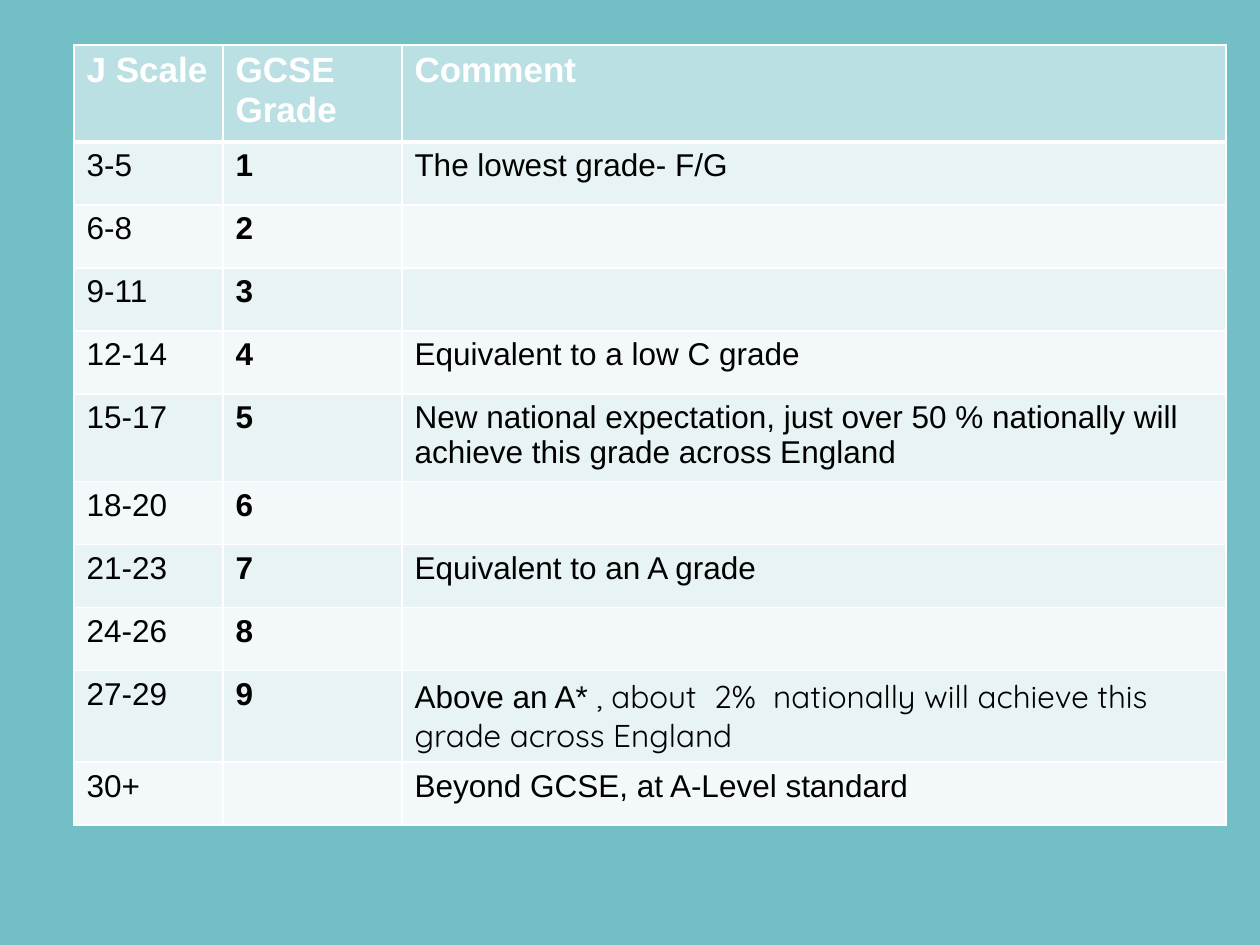
import pptx
import pptx.dml.color
import pptx.oxml.ns
import pptx.util
from lxml import etree

PX = 914400 // 126
THEME = {
    "background": "72BFC5", "header": "BBE0E3", "bands": ("F3F9FA", "E7F3F4"),
    "line": "FFFFFF", "header_text": "FFFFFF", "text": "000000",
    "header_size": 20, "body_size": 18, "font": "Arial", "accent_font": "Quicksand",
}
LEFT, TOP = 74, 45
COL_WIDTHS = (149, 179, 824)
HEADER_HEIGHT, ROW_HEIGHT, TALL_HEIGHT = 97, 63, 88
HEADINGS = ("J Scale", "GCSE Grade", "Comment")
COMMENTS = {
    1: ["The lowest grade- F/G"],
    4: ["Equivalent to a low C grade"],
    5: ["New national expectation, just over 50 % nationally will achieve this grade across England"],
    7: ["Equivalent to an A grade"],
    9: ["Above an A* ", ", about  2%  nationally will achieve this grade across England"],
}


def rgb(name):
    return pptx.dml.color.RGBColor.from_string(name)


def add_border(cell, side, points):
    tc_pr = cell._tc.get_or_add_tcPr()
    qn = pptx.oxml.ns.qn
    ln = etree.SubElement(tc_pr, qn("a:ln" + side), w=str(pptx.util.Pt(points)))
    fill = etree.SubElement(ln, qn("a:solidFill"))
    etree.SubElement(fill, qn("a:srgbClr"), val=THEME["line"])


rows = [[[heading] for heading in HEADINGS]]
for grade in range(1, 10):
    scale = f"{3 * grade}-{3 * grade + 2}"
    rows.append([[scale], [str(grade)], COMMENTS.get(grade, [])])
rows.append([["30+"], [], ["Beyond GCSE, at A-Level standard"]])

heights = [HEADER_HEIGHT] + [ROW_HEIGHT] * 10
heights[5] = heights[9] = TALL_HEIGHT

prs = pptx.Presentation()
prs.slide_width = pptx.util.Inches(10)
prs.slide_height = pptx.util.Inches(7.5)
s = prs.slides.add_slide(prs.slide_layouts[6])
s.background.fill.solid()
s.background.fill.fore_color.rgb = rgb(THEME["background"])

frame = s.shapes.add_table(
    len(rows), len(COL_WIDTHS), LEFT * PX, TOP * PX, sum(COL_WIDTHS) * PX, sum(heights) * PX
)
table = frame.table
for column, width in zip(table.columns, COL_WIDTHS):
    column.width = width * PX
for row, height in zip(table.rows, heights):
    row.height = height * PX

for i, row in enumerate(rows):
    header = i == 0
    for j, texts in enumerate(row):
        cell = table.cell(i, j)
        for side in "LRTB":
            thick = (i, side) in ((0, "B"), (1, "T"))
            add_border(cell, side, 3 if thick else 1)
        cell.fill.solid()
        cell.fill.fore_color.rgb = rgb(THEME["header"] if header else THEME["bands"][i % 2])
        p = cell.text_frame.paragraphs[0]
        for k, text in enumerate(texts):
            r = p.add_run()
            r.text = text
            r.font.name = THEME["accent_font" if k else "font"]
            r.font.size = pptx.util.Pt(THEME["header_size" if header else "body_size"])
            r.font.bold = header or j == 1
            r.font.color.rgb = rgb(THEME["header_text" if header else "text"])

prs.save("out.pptx")
